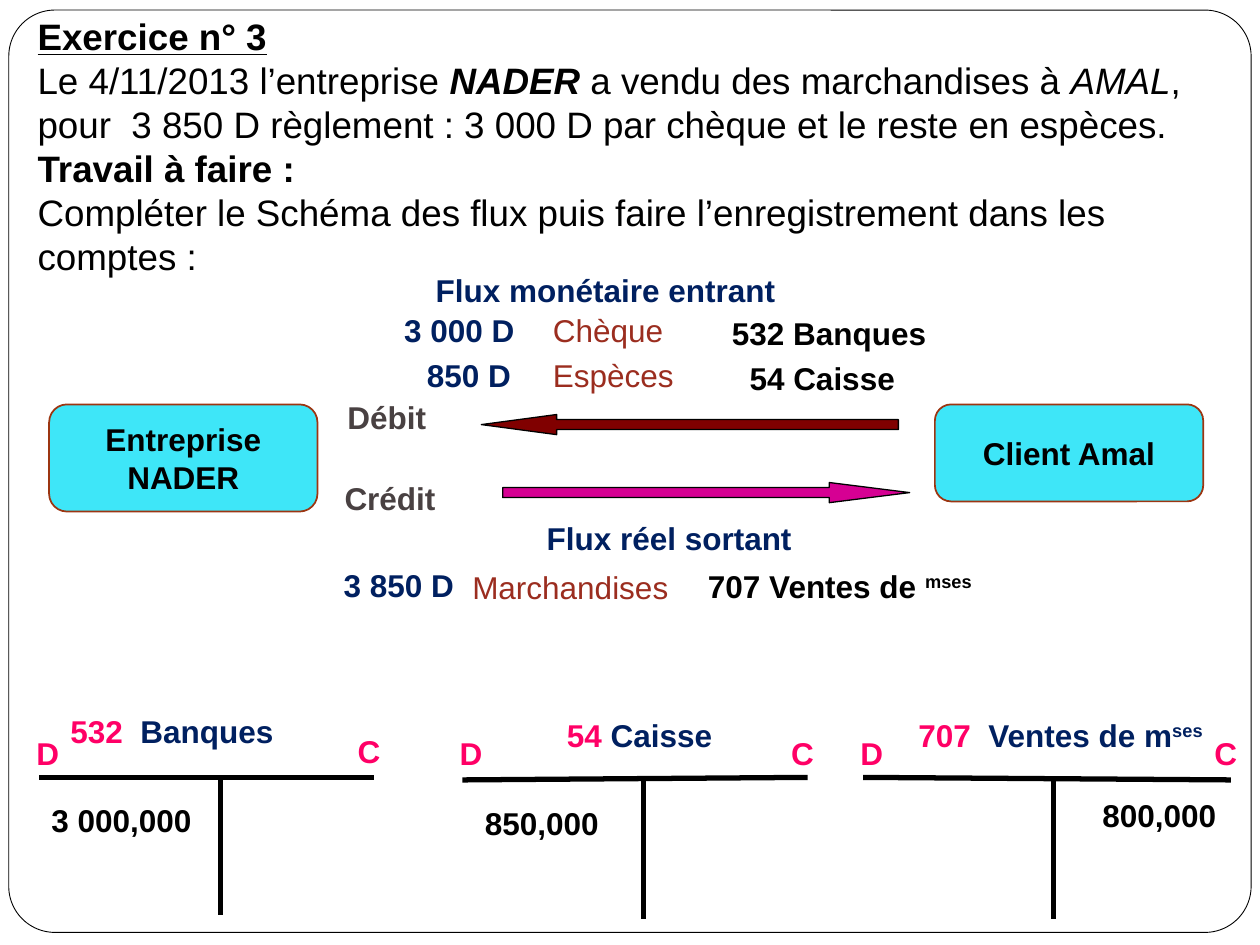
from dataclasses import dataclass
from typing import NamedTuple

from lxml import etree
from pptx import Presentation
from pptx import util as u
from pptx.dml.color import RGBColor
from pptx.enum import shapes, text
from pptx.oxml.ns import qn

COLORS = {
    "ink": "000000", "paper": "FFFFFF", "navy": "002060", "pink": "FF0066",
    "brick": "9B2D1F", "grey": "494142", "cyan": "3EE6F8", "rust": "9C3511",
    "maroon": "800000", "magenta": "D60093",
}
COLUMNS, ROWS = 100, 75
LABEL_ROWS = 4
CENTER = text.PP_ALIGN.CENTER

deck = Presentation()
deck.slide_width, deck.slide_height = u.Inches(10), u.Inches(7.5)
slide = deck.slides.add_slide(deck.slide_layouts[6])


class Run(NamedTuple):
    text: str
    color: str | None = None
    bold: bool | None = None
    italic: bool | None = None
    underline: bool | None = None
    raised: bool = False


@dataclass
class Label:
    col: float
    row: float
    cols: float
    runs: list[Run]
    color: str = "ink"
    bold: bool = True
    align: text.PP_ALIGN | None = None
    wrap: bool = True


@dataclass
class Block:
    kind: shapes.MSO_SHAPE
    col: float
    row: float
    cols: float
    rows: float
    fill: str
    line: str
    line_width: float
    adjustments: tuple[float, ...] = ()
    caption: str = ""


@dataclass
class Account:
    """A T account: its bar runs from left to right, its stem drops at stem."""
    left: float
    right: float
    stem: float
    left_row: float
    right_row: float
    stem_row: float
    credit_row: float
    title: Label
    amount: Label


def x(cols: float) -> int:
    return round(deck.slide_width * cols / COLUMNS)


def y(rows: float) -> int:
    return round(deck.slide_height * rows / ROWS)


def rgb(name: str) -> RGBColor:
    return RGBColor.from_string(COLORS[name])


def style(paragraph, size: float, color: str, bold: bool, align=None) -> None:
    font = paragraph.font
    font.name, font.size, font.bold = "Arial", u.Pt(size), bold
    font.color.rgb = rgb(color)
    paragraph.alignment = align


def add_runs(paragraph, runs: list[Run]) -> None:
    for part in runs:
        run = paragraph.add_run()
        run.text = part.text
        run.font.bold, run.font.italic = part.bold, part.italic
        run.font.underline = part.underline
        if part.color:
            run.font.color.rgb = rgb(part.color)
        if part.raised:
            run.font._element.set("baseline", "30000")


def draw_label(label: Label) -> None:
    box = slide.shapes.add_textbox(x(label.col), y(label.row), x(label.cols), y(LABEL_ROWS))
    box.text_frame.word_wrap = label.wrap
    paragraph = box.text_frame.paragraphs[0]
    style(paragraph, 18, label.color, label.bold, label.align)
    add_runs(paragraph, label.runs)


def draw_block(block: Block) -> None:
    shape = slide.shapes.add_shape(
        block.kind, x(block.col), y(block.row), x(block.cols), y(block.rows))
    shape.shadow.inherit = False
    shape.fill.solid()
    shape.fill.fore_color.rgb = rgb(block.fill)
    shape.line.color.rgb = rgb(block.line)
    shape.line.width = u.Pt(block.line_width)
    for index, value in enumerate(block.adjustments):
        shape.adjustments[index] = value
    if block.caption:
        paragraph = shape.text_frame.paragraphs[0]
        style(paragraph, 18, "ink", True, CENTER)
        add_runs(paragraph, [Run(block.caption)])


def draw_rule(col: float, row: float, end_col: float, end_row: float) -> None:
    rule = slide.shapes.add_connector(
        shapes.MSO_CONNECTOR.STRAIGHT, x(col), y(row), x(end_col), y(end_row))
    rule.line.color.rgb = rgb("ink")
    rule.line.width = u.Pt(3)
    etree.SubElement(rule._element.spPr, qn("a:effectLst"))


def draw_account(account: Account) -> None:
    draw_rule(account.left, account.left_row, account.right, account.right_row)
    draw_rule(account.stem, account.stem_row, account.stem, account.stem_row + 11)
    draw_label(account.title)
    draw_label(Label(account.left - 1.2, 57.8, 4.4, [Run("D")], "pink"))
    draw_label(Label(account.right - 2.3, account.credit_row, 3.8, [Run("C")], "pink"))
    draw_label(account.amount)


def draw_statement(paragraphs: list[list[Run]]) -> None:
    frame = slide.shapes.add_textbox(0, y(0.6), x(100), y(27.5)).text_frame
    frame.word_wrap = True
    for index, runs in enumerate(paragraphs):
        paragraph = frame.add_paragraph() if index else frame.paragraphs[0]
        style(paragraph, 21, "ink", False)
        paragraph._p.get_or_add_pPr().set("marL", str(u.Inches(0.2)))
        add_runs(paragraph, runs)


ROUNDED = shapes.MSO_SHAPE.ROUNDED_RECTANGLE
frame_block = Block(ROUNDED, 0.7, 0.8, 98.6, 73.2, "paper", "ink", 0.5, (0.05,))
flow_blocks = [
    Block(ROUNDED, 3.9, 32.1, 21.3, 8.5, "cyan", "rust", 1, caption="Entreprise NADER"),
    Block(ROUNDED, 74.2, 32.1, 21.3, 7.7, "cyan", "rust", 1, caption="Client Amal"),
    Block(shapes.MSO_SHAPE.RIGHT_ARROW, 39.9, 38.3, 32.3, 1.6, "magenta", "ink", 0.75,
          (0.5, 3.99)),
    Block(shapes.MSO_SHAPE.LEFT_ARROW, 38.2, 32.9, 33.1, 1.6, "maroon", "ink", 0.75,
          (0.5, 3.74)),
]
statement = [
    [Run("Exercice n° 3", bold=True, underline=True)],
    [Run("Le 4/11/2013 l’entreprise "), Run("NADER", bold=True, italic=True),
     Run(" a vendu des marchandises à "), Run("AMAL", italic=True),
     Run(", pour  3 850 D règlement : 3 000 D par chèque et le reste en espèces.")],
    [Run("Travail à faire :", bold=True)],
    [Run("Compléter le Schéma des flux puis faire l’enregistrement dans les comptes :")],
]
flow_labels = [
    Label(33.6, 21, 32.8, [Run("Flux monétaire entrant")], "navy"),
    Label(42.4, 40.7, 30.5, [Run("Flux réel sortant")], "navy"),
    Label(24.4, 31.1, 13.3, [Run("Débit ")], "grey", align=CENTER),
    Label(24.1, 37.5, 15.1, [Run("Crédit  ")], "grey", align=CENTER),
    Label(31.1, 24.2, 12.6, [Run("3 000 D")], "navy"),
    Label(42.9, 24.2, 12.5, [Run("Chèque")], "brick", bold=False),
    Label(57.1, 24.4, 18.1, [Run("532 Banques")]),
    Label(32.9, 27.8, 8.7, [Run("850 D")], "navy"),
    Label(42.9, 27.8, 12.5, [Run("Espèces")], "brick", bold=False),
    Label(58.5, 28, 18.1, [Run("54 Caisse")]),
    Label(25.3, 44.4, 13.4, [Run("3 850 D ")], "navy", align=CENTER),
    Label(36.5, 44.6, 18.9, [Run("Marchandises")], "brick", bold=False),
    Label(55.2, 44.5, 33.9, [Run("707 Ventes de "), Run("mses", raised=True)]),
]
accounts = [
    Account(3.1, 29.7, 17.5, 61.7, 61.7, 61.6, 57.6,
            Label(4.6, 56, 18.8, [Run("532 ", "pink"), Run(" Banques")], "navy"),
            Label(3.1, 63.1, 13.2, [Run("3 000,000")], wrap=False)),
    Account(36.7, 64.1, 51.1, 61.9, 61.7, 61.9, 57.8,
            Label(44, 56.3, 13.7, [Run("54 ", "pink"), Run("Caisse")], "navy"),
            Label(37.5, 63.3, 11.1, [Run("850,000")], wrap=False)),
    Account(68.5, 97.7, 83.6, 61.7, 61.9, 61.9, 57.8,
            Label(71.9, 56.3, 25.8, [Run("707  ", "pink"), Run("Ventes de m"),
                                     Run("ses", raised=True)], "navy"),
            Label(86.5, 62.7, 11.1, [Run("800,000")], wrap=False)),
]

draw_block(frame_block)
draw_statement(statement)
for flow_block in flow_blocks:
    draw_block(flow_block)
for flow_label in flow_labels:
    draw_label(flow_label)
for t_account in accounts:
    draw_account(t_account)
deck.save("out.pptx")
